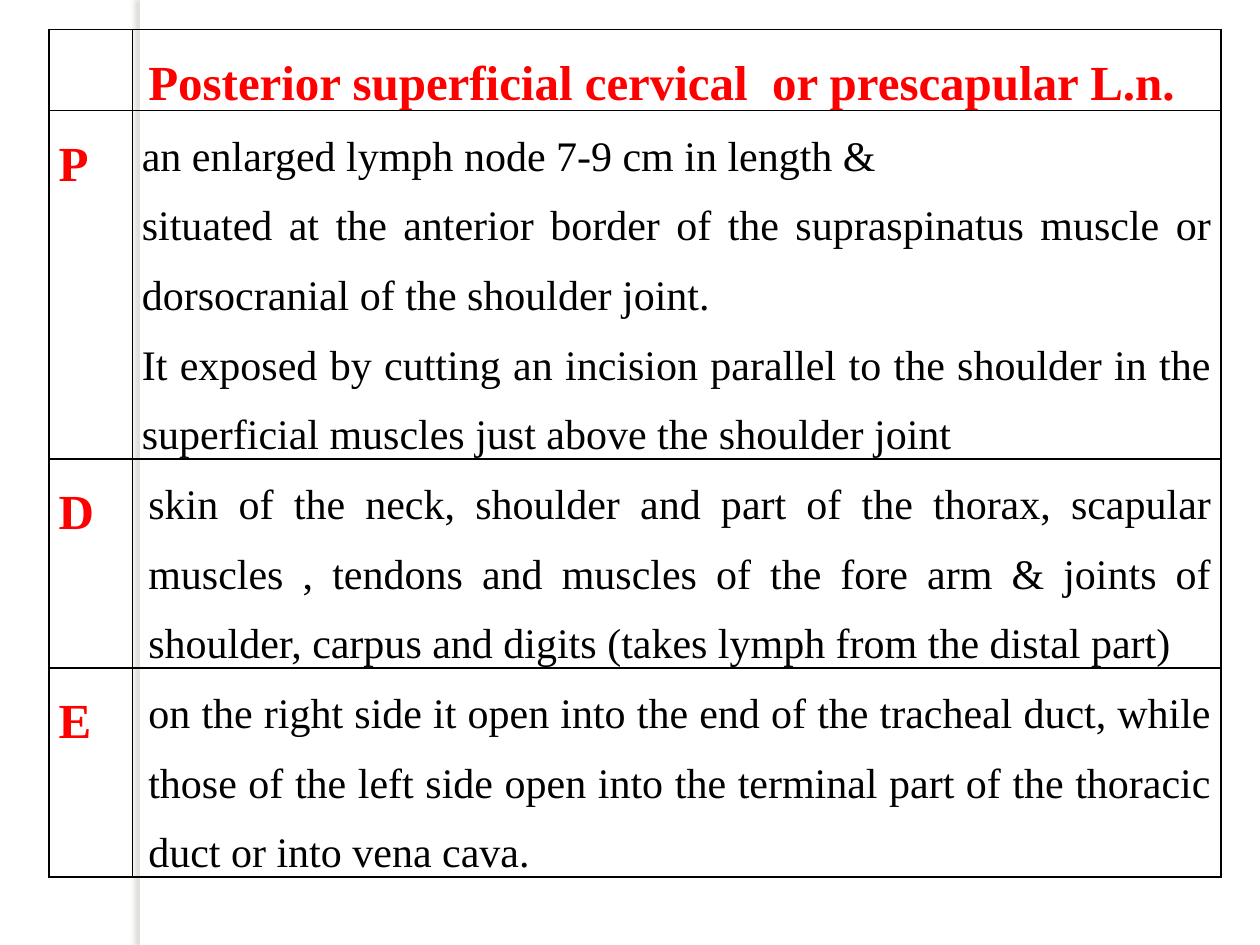
import pptx
import pptx.util
import pptx.dml.color
import pptx.enum.shapes
import pptx.enum.text
import pptx.oxml
import pptx.oxml.ns

Cm, Pt = pptx.util.Cm, pptx.util.Pt
RGB = pptx.dml.color.RGBColor.from_string
NS = pptx.oxml.ns.nsdecls("a")
HUES = {"red": "FF0000", "ink": "000000", "white": "FFFFFF", "shade": "7E7763"}
HEAD = {"name": "Times New Roman", "size": Pt(28), "bold": True}
BODY = {"name": "Times New Roman", "size": Pt(24), "bold": False}
PADS = {"margin_left": Cm(0.19), "margin_right": Cm(0.19),
        "margin_top": 0, "margin_bottom": 0}

deck = pptx.Presentation()
deck.slide_width, deck.slide_height = Cm(25.4), Cm(19.05)
slide = deck.slides.add_slide(deck.slide_layouts[6])

# White strip with a soft shadow to its left
strip = slide.shapes.add_shape(pptx.enum.shapes.MSO_SHAPE.RECTANGLE,
                               Cm(2.82), 0, Cm(0.2), deck.slide_height)
strip.fill.solid()
strip.fill.fore_color.rgb = RGB(HUES["white"])
strip.line.fill.background()
strip._element.spPr.append(pptx.oxml.parse_xml(
    f'<a:effectLst {NS}><a:outerShdw blurRad="{Pt(3)}" dist="{Pt(3)}" '
    f'dir="10800000" algn="tl" rotWithShape="0"><a:srgbClr val="{HUES["shade"]}">'
    '<a:alpha val="25000"/></a:srgbClr></a:outerShdw></a:effectLst>'))

# Row letter, left indent of the text in cm, paragraphs
rows = [
    ("", 0.13, ["Posterior superficial cervical  or prescapular L.n."]),
    ("P", 0, [
        "an enlarged lymph node 7-9 cm in length &",
        "situated at the anterior border of the supraspinatus muscle or "
        "dorsocranial of the shoulder joint.",
        "It exposed by cutting an incision parallel to the shoulder in the "
        "superficial muscles just above the shoulder joint"]),
    ("D", 0.13, [
        "skin of the neck, shoulder and part of the thorax, scapular muscles , "
        "tendons and muscles of the fore arm & joints of shoulder, carpus and "
        "digits (takes lymph from the distal part)"]),
    ("E", 0.13, [
        "on the right side it open into the end of the tracheal duct, while "
        "those of the left side open into the terminal part of the thoracic "
        "duct or into vena cava."]),
]
tall = [1.63, 7, 4.2, 4.2]
wide = [1.68, 21.94]

# Table frame
table = slide.shapes.add_table(len(rows), len(wide), Cm(0.99), Cm(0.59),
                               Cm(sum(wide)), Cm(sum(tall))).table
table.first_row = table.horz_banding = False
for col, width in zip(table.columns, wide):
    col.width = Cm(width)
for row, height in zip(table.rows, tall):
    row.height = Cm(height)

# Cell borders, margins and text
for r, (mark, dent, lines) in enumerate(rows):
    for c, texts in enumerate([[mark], lines]):
        cell = table.cell(r, c)
        props = cell._tc.get_or_add_tcPr()
        for side in "LRTB":
            props.append(pptx.oxml.parse_xml(
                f'<a:ln{side} {NS} w="{Pt(1)}"><a:solidFill>'
                f'<a:srgbClr val="{HUES["ink"]}"/></a:solidFill></a:ln{side}>'))
        cell.fill.background()
        for key, value in PADS.items():
            setattr(cell, key, value)
        if not texts[0]:
            continue
        top = r == 0 or c == 0
        cell.text = "\n".join(texts)
        for para in cell.text_frame.paragraphs:
            para.alignment = pptx.enum.text.PP_ALIGN.JUSTIFY
            para.line_spacing = 1.5
            if c and dent:
                para._p.get_or_add_pPr().set("marL", str(Cm(dent)))
            font = para.runs[0].font
            for key, value in (HEAD if top else BODY).items():
                setattr(font, key, value)
            font.color.rgb = RGB(HUES["red" if top else "ink"])

deck.save("out.pptx")
